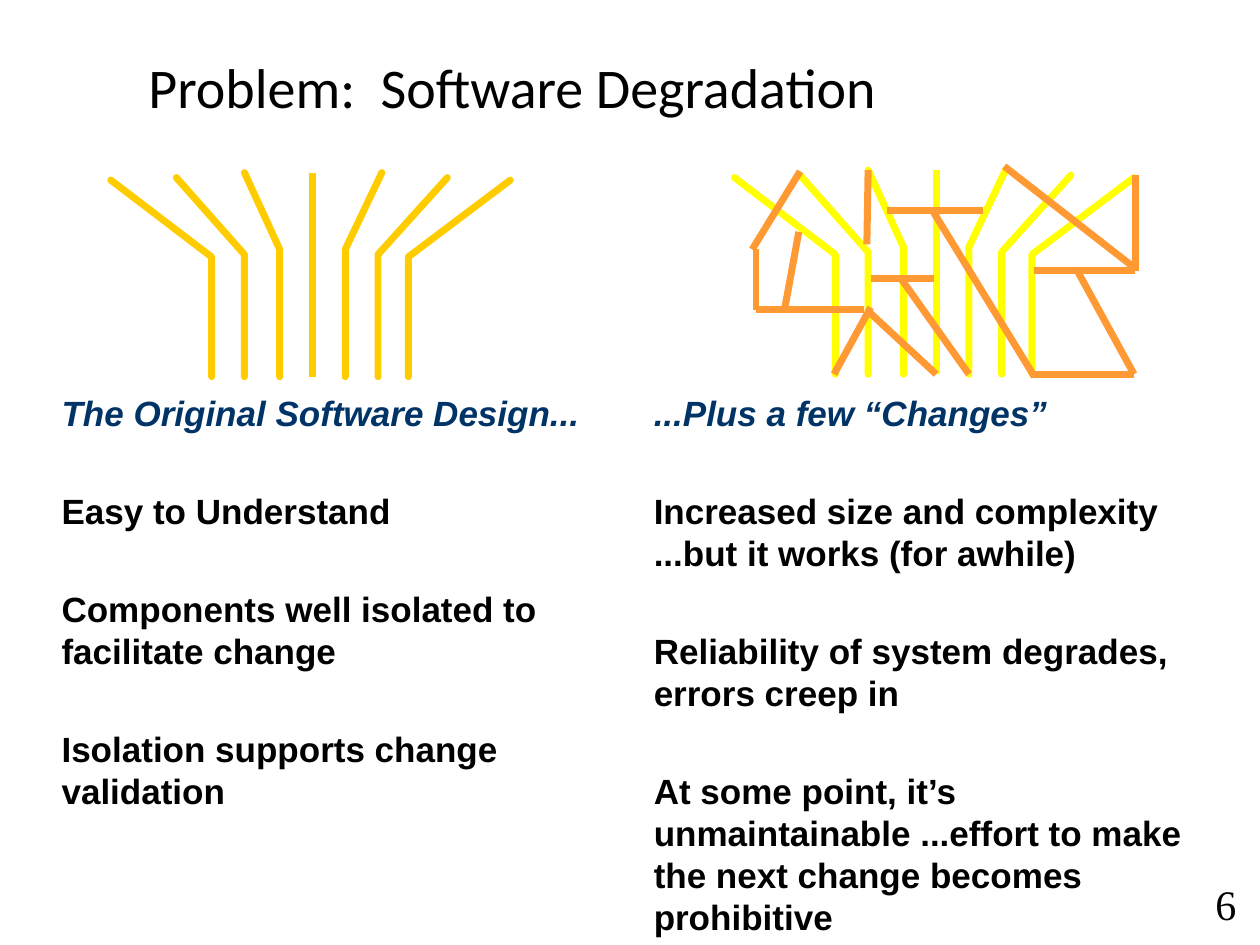
from lxml import etree
from pptx import Presentation
from pptx.dml.color import RGBColor
from pptx.enum.shapes import MSO_CONNECTOR
from pptx.enum.text import MSO_ANCHOR, PP_ALIGN
from pptx.oxml.ns import qn
from pptx.util import Inches, Pt

STRAIGHT = MSO_CONNECTOR.STRAIGHT
TOP, BOTTOM = MSO_ANCHOR.TOP, MSO_ANCHOR.BOTTOM
LEFT, RIGHT = PP_ALIGN.LEFT, PP_ALIGN.RIGHT
BLACK = RGBColor(0x00, 0x00, 0x00)
NAVY = RGBColor(0x00, 0x33, 0x66)
GOLD = RGBColor(0xFF, 0xCC, 0x00)
YELLOW = RGBColor(0xFF, 0xFF, 0x00)
ORANGE = RGBColor(0xFF, 0x99, 0x33)

presentation = Presentation()
presentation.slide_width = Inches(10)
presentation.slide_height = Inches(7.5)
COLUMN = presentation.slide_width / 100
ROW = presentation.slide_height / 75
slide = presentation.slides.add_slide(presentation.slide_layouts[6])


def add_text(paragraphs, box, font="Arial", size=20, color=BLACK, heading_color=None,
             bold=False, align=LEFT, anchor=TOP, line_height=None, gap=0):
    left, top, width, height = box
    shape = slide.shapes.add_textbox(round(left * COLUMN), round(top * ROW),
                                     round(width * COLUMN), round(height * ROW))
    frame = shape.text_frame
    frame.word_wrap = True
    frame.vertical_anchor = anchor
    for index, text in enumerate(paragraphs):
        paragraph = frame.paragraphs[0] if index == 0 else frame.add_paragraph()
        paragraph.text = text
        paragraph.alignment = align
        if line_height:
            paragraph.line_spacing = Pt(line_height)
        if index:
            paragraph.space_before = Pt(gap)
        is_heading = heading_color is not None and index == 0
        for run in paragraph.runs:
            run.font.name = font
            run.font.size = Pt(size)
            run.font.bold = bold
            run.font.italic = is_heading
            run.font.color.rgb = heading_color if is_heading else color


def add_stroke(points, color):
    corners = [(round(x * COLUMN), round(y * ROW)) for x, y in points]
    if len(corners) == 2:
        shape = slide.shapes.add_connector(STRAIGHT, *corners[0], *corners[1])
        etree.SubElement(shape._element.spPr, qn("a:effectLst"))
    else:
        builder = slide.shapes.build_freeform(*corners[0])
        builder.add_line_segments(corners[1:], close=False)
        shape = builder.convert_to_shape()
        shape.fill.background()
        shape.shadow.inherit = False
    shape.line.color.rgb = color
    shape.line.width = Pt(4)
    if len(corners) > 2:
        outline = shape.line._get_or_add_ln()
        outline.set("cap", "rnd")
        etree.SubElement(outline, qn("a:round"))


add_text(["6"], (78.3, 69.2, 20.8, 4.2), font="Times New Roman", size=24, align=RIGHT)
add_text(["Problem:  Software Degradation"], (10.8, 4.2, 85, 5.8),
         font="Calibri", size=32, anchor=BOTTOM)

columns = [
    ((3.9, 30.6, 44.5, 37.7), [
        "The Original Software Design...",
        "Easy to Understand",
        "Components well isolated to facilitate change",
        "Isolation supports change validation",
    ]),
    ((50.9, 30.6, 48.5, 44.4), [
        "...Plus a few “Changes”",
        "Increased size and complexity\n...but it works (for awhile)",
        "Reliability of system degrades, errors creep in",
        "At some point, it’s unmaintainable ...effort to make the next change becomes prohibitive",
    ]),
]
for box, paragraphs in columns:
    add_text(paragraphs, box, heading_color=NAVY, bold=True, line_height=24, gap=32)

branches = [
    (-16, -8, 0.6), (15.7, 7.6, 0.6),
    (-10.8, -5.4, 0.4), (10.7, 5.2, 0.4),
    (-5.4, -2.6, 0), (5.5, 2.6, 0),
]
for center, top, color in [(24.8, 13.7, GOLD), (74.3, 13.5, YELLOW)]:
    for tip, stem, drop in branches:
        add_stroke([(center + tip, top + drop), (center + stem, top + drop + 6.1),
                    (center + stem, top + 16.2)], color)
    add_stroke([(center, top), (center, top + 16.2)], color)

changes = [
    ((63.5, 13.6), (59.7, 19.8)),
    ((60, 19.8), (60, 24.6)),
    ((60, 24.6), (68.6, 24.6)),
    ((63.4, 18.4), (62.3, 24.4)),
    ((68.8, 19.4), (68.9, 13.5)),
    ((68.8, 24.6), (74.3, 29.7)),
    ((90.1, 13.9), (90.1, 21.5)),
    ((90.1, 21.5), (82.1, 21.5)),
    ((90.1, 21.3), (79.7, 13.2)),
    ((70.4, 16.7), (78, 16.7)),
    ((74, 16.7), (82.1, 29.9)),
    ((81.9, 29.7), (90, 29.7)),
    ((85.4, 21.3), (90, 29.7)),
    ((66.2, 29.7), (69.1, 24.4)),
    ((69.1, 22.1), (74.1, 22.1)),
    ((76.9, 29.7), (71.5, 22.1)),
]
for change in changes:
    add_stroke(change, ORANGE)

presentation.save("out.pptx")
